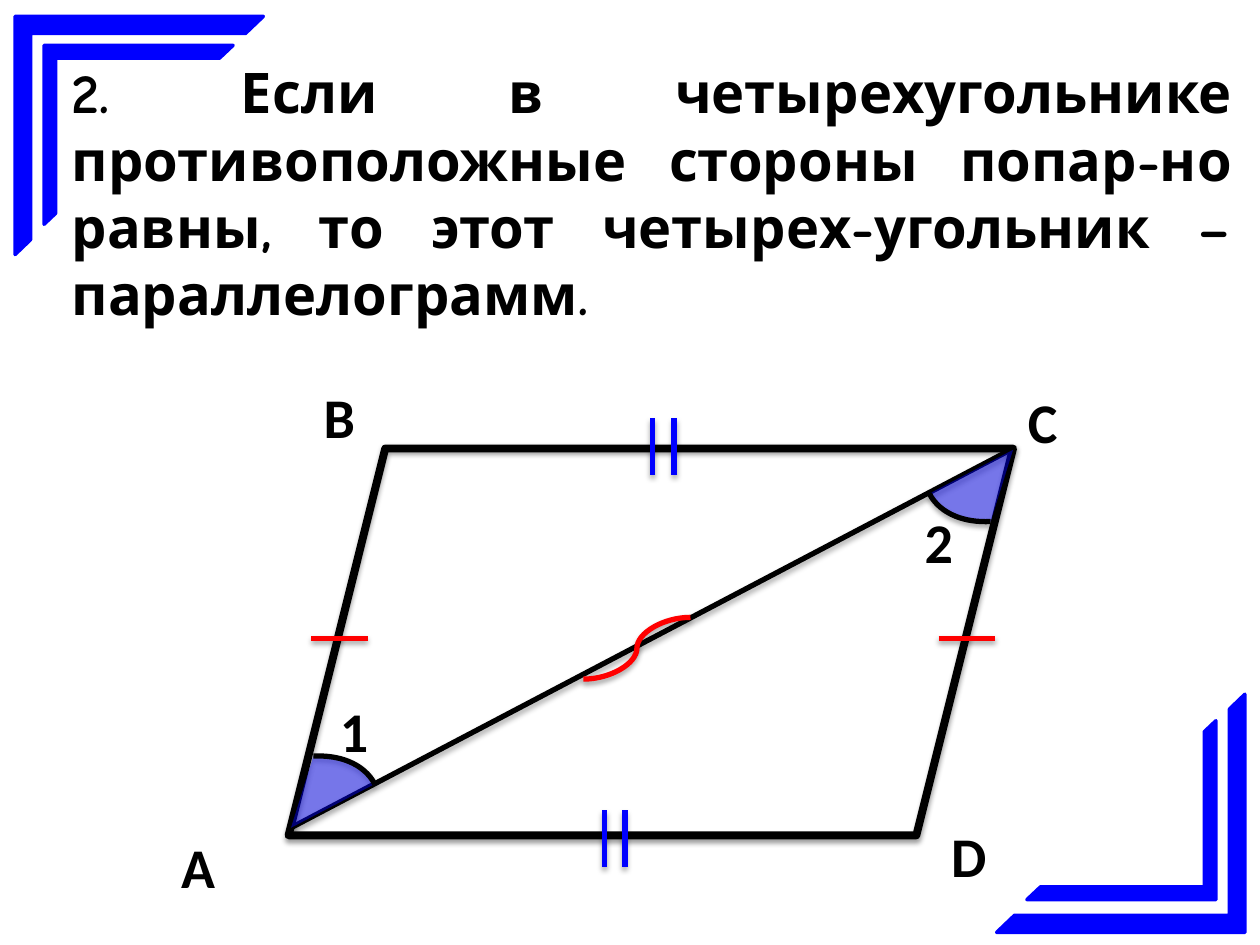
from typing import NamedTuple

from lxml.etree import SubElement
from pptx import Presentation
from pptx.dml.color import RGBColor
from pptx.enum.shapes import MSO_CONNECTOR, MSO_SHAPE
from pptx.enum.text import MSO_AUTO_SIZE, PP_ALIGN
from pptx.oxml import parse_xml
from pptx.oxml.ns import nsdecls, qn
from pptx.util import Inches, Pt

COLORS = {"black": "000000", "blue": "0000FF", "red": "FF0000"}
THEOREM = ("2. Если в четырехугольнике противоположные стороны попар-но равны, "
           "то этот четырех-угольник – параллелограмм.")


class Box(NamedTuple):
    left: float
    top: float
    width: float
    height: float


class Stroke(NamedTuple):
    start: tuple[float, float]
    end: tuple[float, float]
    color: str
    kind: MSO_CONNECTOR = MSO_CONNECTOR.STRAIGHT


class Label(NamedTuple):
    text: str
    box: Box


class Sector(NamedTuple):
    box: Box
    rotation: float


class Frame(NamedTuple):
    box: Box
    rotation: float


FRAMES = [
    Frame(Box(0.12, 0.13, 1.97, 1.89), 0),
    Frame(Box(0.35, 0.36, 1.5, 1.42), 0),
    Frame(Box(7.91, 5.51, 1.97, 1.89), 180),
    Frame(Box(8.15, 5.72, 1.5, 1.42), 180),
]
LABELS = [
    Label("А", Box(1.34, 6.56, 0.47, 0.64)),
    Label("D", Box(7.45, 6.47, 0.48, 0.64)),
    Label("C", Box(8.06, 3.03, 0.44, 0.64)),
    Label("B", Box(2.47, 2.99, 0.45, 0.64)),
    Label("1", Box(2.6, 5.48, 0.43, 0.64)),
    Label("2", Box(7.24, 3.98, 0.43, 0.64)),
]
TICK = 0.45
DIAGONAL = Stroke((2.29, 6.58), (8.04, 3.56), "black")
MARKS = [
    Stroke((4.63, 5.39), (5.48, 4.9), "red", MSO_CONNECTOR.CURVE),
    *[Stroke((x, 5.07), (x + TICK, 5.07), "red") for x in (2.47, 7.45)],
    *[Stroke((x, y), (x, y - TICK), "blue")
      for x, y in ((4.8, 6.88), (4.96, 6.88), (5.18, 3.77), (5.35, 3.77))],
]
# The angle at A is the angle at C turned by half a circle
SECTORS = [
    Sector(Box(7.29, 3.06, 1.5, 1.02), 152.4),
    Sector(Box(1.56, 6.06, 1.5, 1.02), 332.4),
]
SECTOR_START = 314.92  # degrees; the sector ends at 0


def rgb(name: str) -> RGBColor:
    return RGBColor.from_string(COLORS[name])


def inches(values) -> list:
    return [Inches(value) for value in values]


def set_line(shape, color: str, width: float) -> None:
    shape.line.color.rgb = rgb(color)
    shape.line.width = Pt(width)


def add_shadow(shape, alpha: int = 35, distance: float = 1.8) -> None:
    """Soft shadow straight below; call it after fill and line are set."""
    shape._element.spPr.append(parse_xml(
        f'<a:effectLst {nsdecls("a")}><a:outerShdw blurRad="{Pt(3.1)}" '
        f'dist="{Pt(distance)}" dir="5400000" rotWithShape="0">'
        f'<a:srgbClr val="{COLORS["black"]}"><a:alpha val="{alpha * 1000}"/>'
        f'</a:srgbClr></a:outerShdw></a:effectLst>'))


def add_frame(group, frame: Frame) -> None:
    shape = group.shapes.add_shape(MSO_SHAPE.HALF_FRAME, *inches(frame.box))
    shape.adjustments[0], shape.adjustments[1] = 0.072, 0.065
    shape.rotation = frame.rotation
    shape.fill.solid()
    shape.fill.fore_color.rgb = rgb("blue")
    set_line(shape, "blue", 2)
    shape.shadow.inherit = False


def add_parallelogram(slide, box: Box) -> None:
    shape = slide.shapes.add_shape(MSO_SHAPE.PARALLELOGRAM, *inches(box))
    shape.fill.background()
    set_line(shape, "black", 4.5)
    add_shadow(shape, alpha=38, distance=1.6)


def add_stroke(slide, stroke: Stroke) -> None:
    connector = slide.shapes.add_connector(
        stroke.kind, *inches(stroke.start + stroke.end))
    set_line(connector, stroke.color, 3)
    add_shadow(connector)


def add_text(slide, text: str, box: Box, font_name: str, wrap: bool):
    text_box = slide.shapes.add_textbox(*inches(box))
    frame = text_box.text_frame
    frame.word_wrap = wrap
    frame.auto_size = MSO_AUTO_SIZE.SHAPE_TO_FIT_TEXT
    paragraph = frame.paragraphs[0]
    run = paragraph.add_run()
    run.text = text
    font_format = {"name": font_name, "size": Pt(32), "bold": True}
    for attribute, value in font_format.items():
        setattr(run.font, attribute, value)
    run.font.color.rgb = rgb("black")
    return paragraph


def add_theorem(slide) -> None:
    paragraph = add_text(slide, THEOREM, Box(0.47, 0.41, 9.41, 3.33),
                         "Comic Neue", wrap=True)
    paragraph.alignment = PP_ALIGN.JUSTIFY
    # Thin outline around the letters
    properties = paragraph.runs[0].font._element
    properties.insert(0, parse_xml(
        f'<a:ln {nsdecls("a")} w="{Pt(0.9)}"><a:solidFill>'
        f'<a:srgbClr val="{COLORS["black"]}"/></a:solidFill></a:ln>'))


def add_sector(slide, sector: Sector) -> None:
    shape = slide.shapes.add_shape(MSO_SHAPE.ARC, *inches(sector.box))
    # Angles are stored in 60000ths of a degree, adjustments in 100000ths
    shape.adjustments[0], shape.adjustments[1] = SECTOR_START * 0.6, 0
    shape.rotation = sector.rotation
    shape.fill.solid()
    shape.fill.fore_color.rgb = rgb("blue")
    color = shape._element.spPr.find(qn("a:solidFill"))[0]
    SubElement(color, qn("a:alpha"), val="45000")
    set_line(shape, "black", 3)
    add_shadow(shape)


def main() -> None:
    presentation = Presentation()
    presentation.slide_width, presentation.slide_height = inches((10, 7.5))
    slide = presentation.slides.add_slide(presentation.slide_layouts[6])

    # Corner frames
    corners = slide.shapes.add_group_shape()
    for frame in FRAMES:
        add_frame(corners, frame)

    # Parallelogram with its diagonal and labels
    add_parallelogram(slide, Box(2.29, 3.56, 5.75, 3.07))
    add_stroke(slide, DIAGONAL)
    for label in LABELS:
        add_text(slide, label.text, label.box, "Calibri", wrap=False)

    # Theorem
    add_theorem(slide)

    # Marks of equal sides and angles
    for mark in MARKS:
        add_stroke(slide, mark)
    for sector in SECTORS:
        add_sector(slide, sector)

    presentation.save("out.pptx")


if __name__ == "__main__":
    main()
